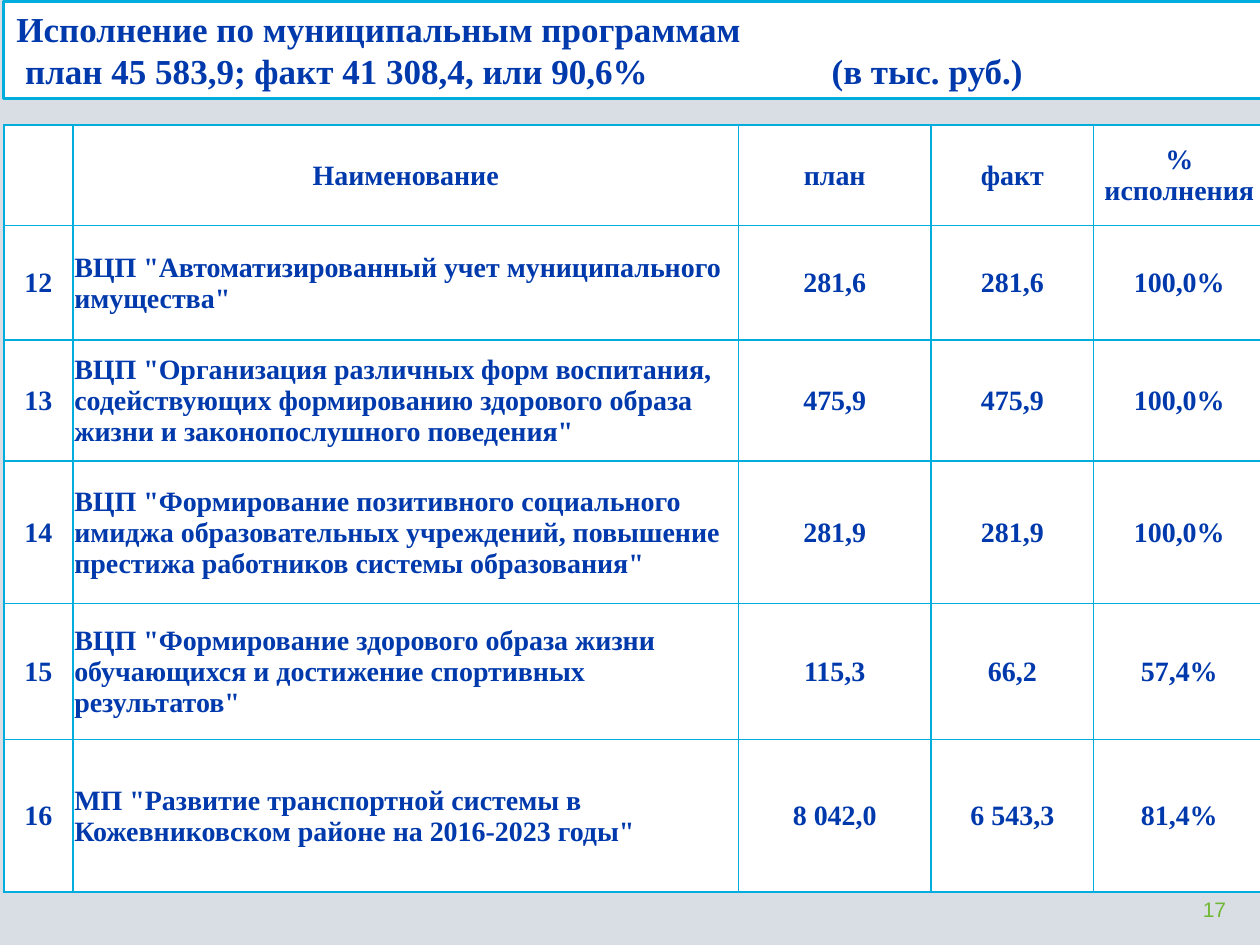
from typing import NamedTuple

from lxml import etree
from pptx import Presentation
from pptx import util as u
from pptx.dml.color import RGBColor
from pptx.enum import text
from pptx.oxml.ns import qn

COLORS = {"background": "D9DEE5", "panel": "FFFFFF", "border": "00ADDC",
          "text": "0039AC", "page": "70B834"}
SERIF = "Times New Roman"
LEFT, CENTER, RIGHT = text.PP_ALIGN.LEFT, text.PP_ALIGN.CENTER, text.PP_ALIGN.RIGHT
MIDDLE = text.MSO_ANCHOR.MIDDLE


class Program(NamedTuple):
    number: str
    name: str
    plan: str
    fact: str
    percent: str


HEADINGS = Program("", "Наименование", "план", "факт", "% исполнения")
PROGRAMS = [
    Program("12", 'ВЦП "Автоматизированный учет муниципального имущества"',
            "281,6", "281,6", "100,0%"),
    Program("13", 'ВЦП "Организация различных форм воспитания, содействующих '
            'формированию здорового образа жизни и законопослушного поведения"',
            "475,9", "475,9", "100,0%"),
    Program("14", 'ВЦП "Формирование позитивного социального имиджа образовательных '
            'учреждений, повышение престижа работников системы образования"',
            "281,9", "281,9", "100,0%"),
    Program("15", 'ВЦП "Формирование здорового образа жизни обучающихся и '
            'достижение спортивных результатов"',
            "115,3", "66,2", "57,4%"),
    Program("16", 'МП "Развитие транспортной системы в Кожевниковском районе '
            'на 2016-2023 годы"',
            "8 042,0", "6 543,3", "81,4%"),
]
COLUMN_WIDTHS = [0.55, 5.28, 1.53, 1.29, 1.36]
ROW_HEIGHTS = [0.8, 0.91, 0.96, 1.13, 1.08, 1.21]


def rgb(name: str) -> RGBColor:
    return RGBColor.from_string(COLORS[name])


def fill_solid(fill, color: str) -> None:
    fill.solid()
    fill.fore_color.rgb = rgb(color)


def apply(target, values: dict) -> None:
    for attribute, value in values.items():
        setattr(target, attribute, value)


def write(paragraph, words: str, size: float, color: str = "text", font: str = SERIF,
          bold: bool = True, align=LEFT) -> None:
    apply(paragraph, {"alignment": align, "space_before": u.Pt(0), "line_spacing": 1.0})
    run = paragraph.add_run()
    run.text = words
    apply(run.font, {"name": font, "size": u.Pt(size), "bold": bold})
    run.font.color.rgb = rgb(color)


def add_tab_stop(paragraph, position: float) -> None:
    tabs = etree.SubElement(paragraph._p.get_or_add_pPr(), qn("a:tabLst"))
    etree.SubElement(tabs, qn("a:tab"), pos=str(u.Inches(position)), algn="l")


def border_cell(cell, width: float) -> None:
    properties = cell._tc.get_or_add_tcPr()
    for index, side in enumerate(("lnL", "lnR", "lnT", "lnB")):
        line = etree.Element(qn(f"a:{side}"), w=str(u.Pt(width)))
        solid = etree.SubElement(line, qn("a:solidFill"))
        etree.SubElement(solid, qn("a:srgbClr"), val=COLORS["border"])
        properties.insert(index, line)


def add_heading(slide) -> None:
    heading = slide.shapes.title
    apply(heading, {"left": u.Inches(0.03), "top": u.Inches(0.01),
                    "width": u.Inches(10), "height": u.Inches(0.77)})
    fill_solid(heading.fill, "panel")
    heading.line.color.rgb = rgb("border")
    heading.line.width = u.Pt(1.5)
    frame = heading.text_frame
    apply(frame, {"word_wrap": True, "auto_size": text.MSO_AUTO_SIZE.NONE,
                  "vertical_anchor": MIDDLE})
    write(frame.paragraphs[0], "Исполнение по муниципальным программам", 20)
    totals = frame.add_paragraph()
    add_tab_stop(totals, 6.47)
    write(totals, " план 45 583,9; факт 41 308,4, или 90,6%\t(в тыс. руб.)", 20)


def add_program_table(slide) -> None:
    rows = [HEADINGS, *PROGRAMS]
    table = slide.shapes.add_table(
        len(rows), len(COLUMN_WIDTHS), u.Inches(0.03), u.Inches(0.99),
        u.Inches(sum(COLUMN_WIDTHS)), u.Inches(sum(ROW_HEIGHTS))).table
    apply(table, {"first_row": False, "horz_banding": False})
    for column, width in zip(table.columns, COLUMN_WIDTHS):
        column.width = u.Inches(width)
    for r, (program, height) in enumerate(zip(rows, ROW_HEIGHTS)):
        table.rows[r].height = u.Inches(height)
        for c, words in enumerate(program):
            cell = table.cell(r, c)
            apply(cell, {"vertical_anchor": MIDDLE, "margin_left": u.Inches(0.01),
                         "margin_right": u.Inches(0.01), "margin_top": u.Inches(0.01),
                         "margin_bottom": 0})
            fill_solid(cell.fill, "panel")
            border_cell(cell, 1)
            if words:
                is_name = r > 0 and c == 1
                write(cell.text_frame.paragraphs[0], words, 16,
                      align=LEFT if is_name else CENTER)


def add_page_number(slide, number: str) -> None:
    box = slide.shapes.add_textbox(u.Inches(9), u.Inches(7.08),
                                   u.Inches(0.83), u.Inches(0.27))
    apply(box.text_frame, {"word_wrap": True, "vertical_anchor": MIDDLE})
    write(box.text_frame.paragraphs[0], number, 12, "page", "Arial", False, RIGHT)


def main() -> None:
    deck = Presentation()
    apply(deck, {"slide_width": u.Inches(10), "slide_height": u.Inches(7.5)})
    slide = deck.slides.add_slide(deck.slide_layouts[5])  # Title Only
    fill_solid(slide.background.fill, "background")
    add_heading(slide)
    add_program_table(slide)
    add_page_number(slide, "17")
    deck.save("out.pptx")


if __name__ == "__main__":
    main()
